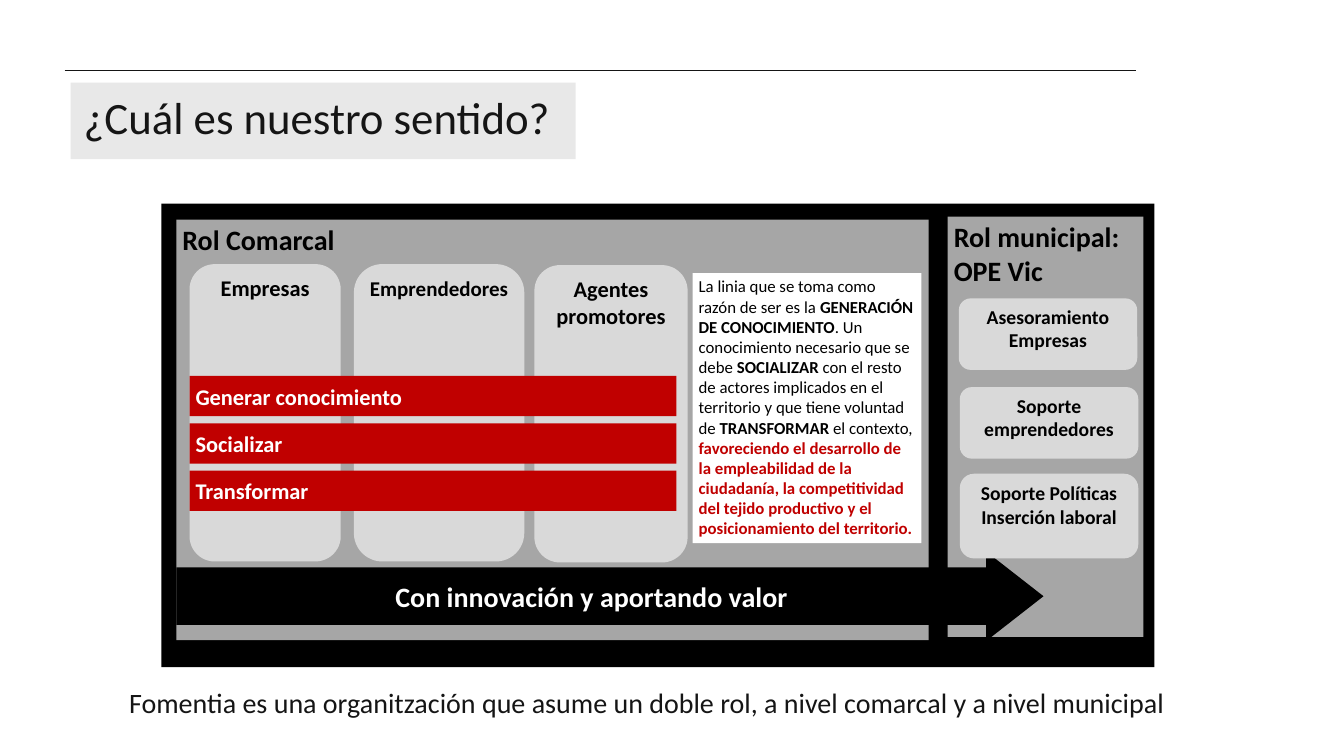
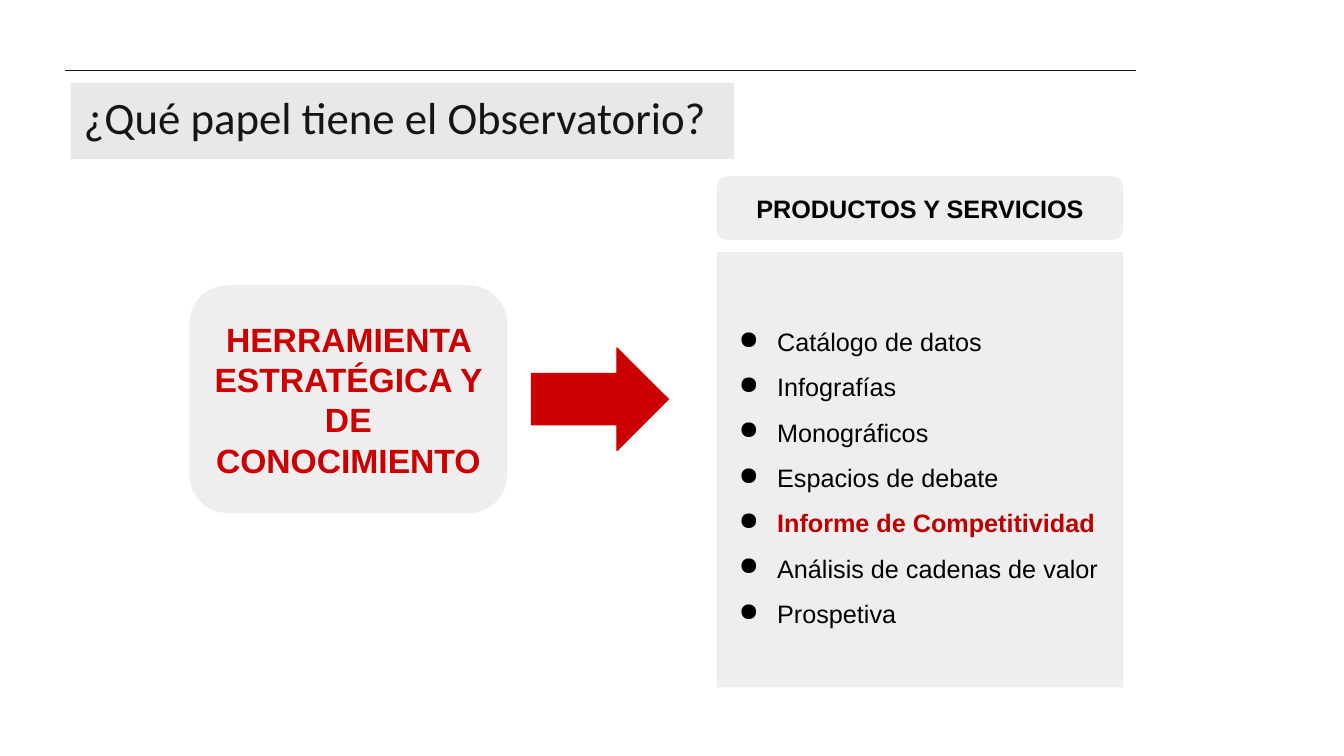
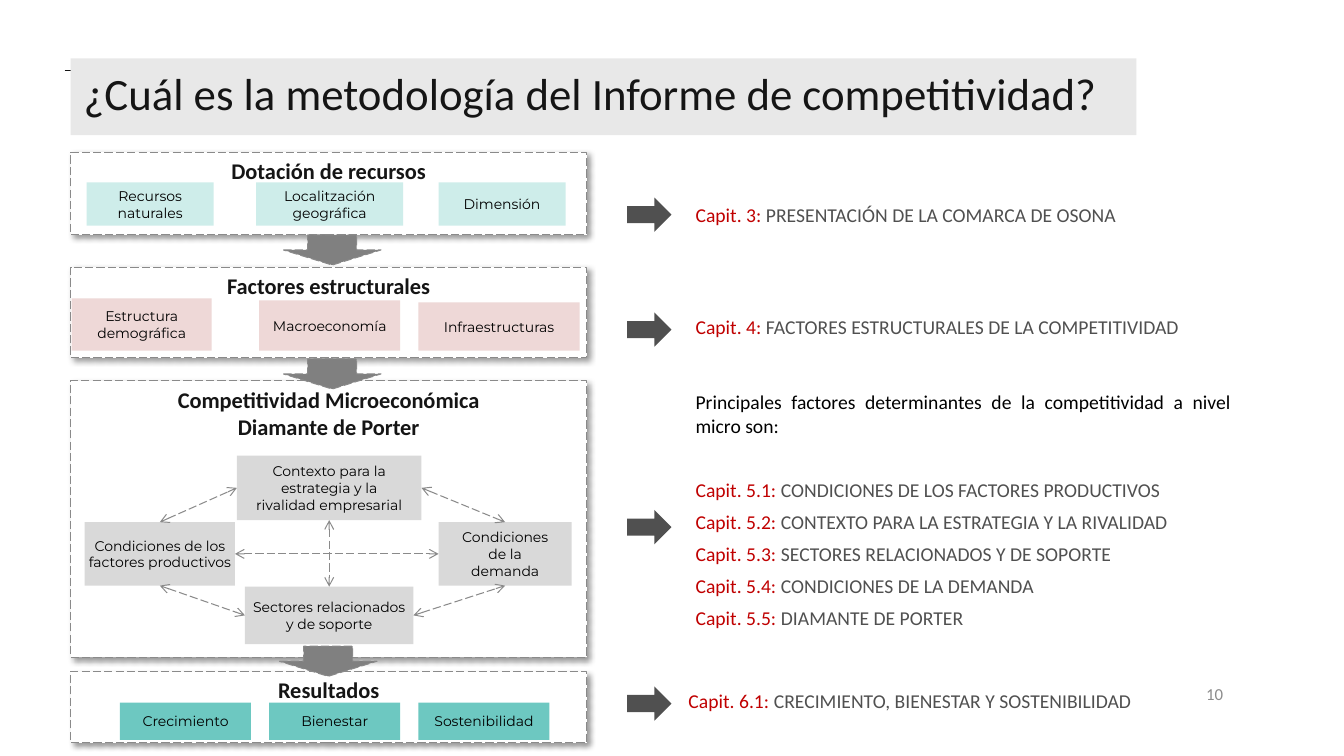
import pptx
import pptx.dml.color
import pptx.enum.dml
import pptx.enum.shapes
import pptx.enum.text
import pptx.oxml.ns
import pptx.util
from lxml import etree

PX = 9144  # EMU per px, 100 px to the inch
COLORS = {
    "white": "FFFFFF", "black": "000000", "ink": "151515", "band": "E8E8E8",
    "panel": "A6A6A6", "card": "D9D9D9", "crimson": "C00000", "red": "CC0000",
    "pale": "EEEEEE", "outline": "8A8A8A", "arrow": "808080", "slate": "505050",
    "number": "8C8C8C", "mint": "CEEDEA", "rose": "EED8D7", "teal": "6DC8C1",
}
SHAPE = pptx.enum.shapes.MSO_SHAPE
ALIGN = pptx.enum.text.PP_ALIGN
ANCHOR = pptx.enum.text.MSO_ANCHOR
TIGHT = (6, 3, 6, 3)
WIDE = (13, 13, 13, 13)
TEN = (10, 10, 10, 10)
PLAIN = (10, 5, 10, 5)
TOP, LEFT, BOTTOM, RIGHT = range(4)  # connection sites of a rectangle


def px(length):
    return pptx.util.Emu(round(length * PX))


def rgb(name):
    return pptx.dml.color.RGBColor.from_string(COLORS[name])


def add_xml(parent, tag, **attributes):
    child = etree.SubElement(parent, pptx.oxml.ns.qn(tag))
    for name, value in attributes.items():
        child.set(name, str(value))
    return child


def chapter(number, heading):
    return [(f"Capit. {number}: ", "crimson", False), (heading, "slate", False)]


class Deck:
    """Holds the presentation, its shared style and the current slide."""

    def __init__(self):
        self.presentation = pptx.Presentation()
        self.presentation.slide_width = px(1333)
        self.presentation.slide_height = px(750)
        self.layout = self.presentation.slide_layouts[5]
        self.slide = None

    def new_slide(self, heading, width, top=82):
        first = self.slide is None
        self.slide = self.presentation.slides.add_slide(self.layout)
        if first:
            self.add_rule_to_layout()
        title = self.slide.shapes.title
        title.left, title.top, title.width, title.height = map(px, (70, top, width, 76))
        title.fill.solid()
        title.fill.fore_color.rgb = rgb("band")
        self.set_text(title, [heading], 32, "ink", inset=WIDE, spacing=0.9)

    def add_rule_to_layout(self):
        """Draw the thin rule once and hand it to the layout, behind every title."""
        rule = self.line((64, 70), (1127, 70), "ink", 0.5)
        self.layout.shapes.element.append(rule.element)

    def line(self, start, end, color, weight):
        connector = self.slide.shapes.add_connector(
            pptx.enum.shapes.MSO_CONNECTOR.STRAIGHT, *map(px, start + end))
        connector.line.color.rgb = rgb(color)
        connector.line.width = pptx.util.Pt(weight)
        add_xml(connector.element.spPr, "a:effectLst")
        return connector

    def link(self, start, start_site, end, end_site):
        """Join two shapes with a dashed double arrow."""
        connector = self.line((0, 0), (0, 0), "outline", 0.75)
        connector.begin_connect(start, start_site)
        connector.end_connect(end, end_site)
        connector.line.dash_style = pptx.enum.dml.MSO_LINE.LONG_DASH
        outline = connector.element.spPr.find(pptx.oxml.ns.qn("a:ln"))
        for tag in ("a:headEnd", "a:tailEnd"):
            add_xml(outline, tag, type="arrow")

    def shape(self, box, fill, kind=SHAPE.RECTANGLE, adjust=(), outline=None, dashed=False):
        shape = self.slide.shapes.add_shape(kind, *map(px, box))
        shape.shadow.inherit = False
        for index, value in enumerate(adjust):
            shape.adjustments[index] = value
        shape.fill.solid()
        shape.fill.fore_color.rgb = rgb(fill)
        if outline:
            shape.line.color.rgb = rgb(outline)
            shape.line.width = pptx.util.Pt(0.75)
            if dashed:
                shape.line.dash_style = pptx.enum.dml.MSO_LINE.LONG_DASH
        else:
            shape.line.fill.background()
        return shape

    def panel(self, box, fill, paragraphs, size, color="black", kind=SHAPE.RECTANGLE,
              adjust=(), **text_style):
        panel = self.shape(box, fill, kind, adjust)
        self.set_text(panel, paragraphs, size, color, **text_style)
        return panel

    def rounded(self, box, fill, paragraphs, size, color="black", **text_style):
        self.panel(box, fill, paragraphs, size, color, SHAPE.ROUNDED_RECTANGLE, (0.167,),
                   bold=True, align=ALIGN.CENTER, **text_style)

    def chip(self, box, fill, paragraphs, inset=PLAIN):
        return self.panel(box, fill, paragraphs, 10, font="Montserrat", align=ALIGN.CENTER,
                          anchor=ANCHOR.MIDDLE, inset=inset)

    def frame(self, box, paragraphs):
        """Dashed white box with a soft shadow and a bold heading."""
        frame = self.shape(box, "white", outline="outline", dashed=True)
        effects = frame.element.spPr.find(pptx.oxml.ns.qn("a:effectLst"))
        shadow = add_xml(effects, "a:outerShdw", blurRad=50800, dist=38100, dir=2700000,
                         algn="tl", rotWithShape=0)
        tint = add_xml(shadow, "a:srgbClr", val=COLORS["black"])
        add_xml(tint, "a:alpha", val=40000)
        self.set_text(frame, paragraphs, 16, "ink", bold=True, align=ALIGN.CENTER)

    def text(self, box, paragraphs, size, color="black", **text_style):
        text_box = self.slide.shapes.add_textbox(*map(px, box))
        self.set_text(text_box, paragraphs, size, color, **text_style)
        return text_box

    def set_text(self, shape, paragraphs, size, color, font="Calibri", bold=False,
                 align=ALIGN.LEFT, anchor=ANCHOR.TOP, inset=PLAIN, spacing=None, after=0,
                 bullet=None):
        """Fill a shape; a paragraph is a string or a list of (text, color, bold) runs."""
        frame = shape.text_frame
        frame.word_wrap = True
        frame.auto_size = pptx.enum.text.MSO_AUTO_SIZE.NONE
        frame.vertical_anchor = anchor
        (frame.margin_left, frame.margin_top,
         frame.margin_right, frame.margin_bottom) = map(px, inset)
        for index, content in enumerate(paragraphs):
            paragraph = frame.add_paragraph() if index else frame.paragraphs[0]
            paragraph.alignment = align
            paragraph.space_before = pptx.util.Pt(0)
            paragraph.space_after = pptx.util.Pt(after)
            if spacing:
                paragraph.line_spacing = spacing
            if bullet:
                self.add_bullet(paragraph, bullet)
            paragraph.font.size = pptx.util.Pt(size)
            paragraph.font.name = font
            paragraph.font.bold = bold
            paragraph.font.color.rgb = rgb(color)
            if isinstance(content, str):
                paragraph.add_run().text = content
                continue
            for words, run_color, run_bold in content:
                run = paragraph.add_run()
                run.text = words
                run.font.bold = run_bold
                run.font.color.rgb = rgb(run_color)

    def add_bullet(self, paragraph, symbol):
        properties = paragraph._p.get_or_add_pPr()
        properties.set("marL", str(px(50)))
        properties.set("indent", str(px(-38)))
        add_xml(add_xml(properties, "a:buClr"), "a:srgbClr", val=COLORS["black"])
        add_xml(properties, "a:buChar", char=symbol)


def build_purpose(deck):
    deck.new_slide("¿Cuál es nuestro sentido?", 501)
    deck.text((115, 662, 1140, 73),
              ["Fomentia es una organitzación que asume un doble rol, "
               "a nivel comarcal y a nivel municipal"],
              20, "ink", align=ALIGN.JUSTIFY, inset=WIDE, spacing=1.15)
    deck.shape((160, 202, 985, 460), "black")
    for box, role in (((940, 215, 194, 417), ["Rol municipal:", "OPE Vic"]),
                      ((175, 218, 746, 417), ["Rol Comarcal"])):
        deck.panel(box, "panel", role, 20, bold=True, inset=TIGHT)

    for left, top, width, size, audience in (
            (188, 262, 150, 16, "Empresas"),
            (351, 262, 169, 15, "Emprendedores"),
            (530, 263, 152, 16, "Agentes promotores")):
        deck.rounded((left, top, width, 295), "card", [audience], size, inset=TIGHT)

    for row, action in enumerate(("Generar conocimiento", "Socializar", "Transformar")):
        deck.panel((188, 373 + 47 * row, 483, 40), "crimson", [action], 16, "white",
                   bold=True, anchor=ANCHOR.MIDDLE, inset=TIGHT)

    deck.panel((175, 547, 860, 89), "black", ["Con innovación y aportando valor"], 20, "white",
               SHAPE.RIGHT_ARROW, (0.64, 0.64), bold=True, align=ALIGN.CENTER,
               anchor=ANCHOR.MIDDLE, inset=TIGHT)

    deck.panel((687, 271, 227, 268), "white", [[
        ("La linia que se toma como razón de ser es la ", "black", False),
        ("GENERACIÓN DE CONOCIMIENTO", "black", True),
        (". Un conocimiento necesario que se debe ", "black", False),
        ("SOCIALIZAR", "black", True),
        (" con el resto de actores implicados en el territorio y que tiene voluntad de ",
         "black", False),
        ("TRANSFORMAR", "black", True),
        (" el contexto, ", "black", False),
        ("favoreciendo el desarrollo de la empleabilidad de la ciudadanía, la competitividad "
         "del tejido productivo y el posicionamiento del territorio.", "crimson", True),
    ]], 12, inset=TIGHT)

    for left, top, height, service in (
            (951, 296, 71, ["Asesoramiento", "Empresas"]),
            (952, 384, 71, ["Soporte emprendedores"]),
            (952, 470, 84, ["Soporte Políticas Inserción laboral"])):
        deck.rounded((left, top, 177, height), "card", service, 14, inset=TIGHT)


def build_observatory(deck):
    deck.new_slide("¿Qué papel tiene el Observatorio?", 658)
    deck.rounded((188, 283, 315, 226), "pale", ["HERRAMIENTA ESTRATÉGICA Y DE CONOCIMIENTO"],
                 24, "red", font="Arial", anchor=ANCHOR.MIDDLE, inset=TEN)
    deck.shape((527, 345, 136, 102), "red", SHAPE.RIGHT_ARROW, outline="red")
    deck.rounded((711, 175, 403, 63), "pale", ["PRODUCTOS Y SERVICIOS"], 18,
                 font="Arial", anchor=ANCHOR.MIDDLE, inset=TEN)
    products = ["Catálogo de datos", "Infografías", "Monográficos", "Espacios de debate",
                [("Informe de Competitividad", "crimson", True)],
                "Análisis de cadenas de valor", "Prospetiva"]
    deck.panel((711, 250, 403, 432), "pale", products, 18, font="Arial",
               anchor=ANCHOR.MIDDLE, inset=TEN, spacing=1.5, bullet="●")


def build_methodology(deck):
    deck.new_slide("¿Cuál es la metodología del Informe de competitividad?", 1057, top=58)
    deck.text((923, 668, 300, 40), ["10"], 12, "number", align=ALIGN.RIGHT,
              anchor=ANCHOR.MIDDLE)

    for top, height, stage in (
            (151, 82, ["Dotación de recursos"]),
            (265, 90, ["Factores estructurales"]),
            (378, 274, ["Competitividad Microeconómica", "Diamante de Porter"]),
            (666, 71, ["Resultados"])):
        deck.frame((70, top, 512, height), stage)
    for left, top in ((281, 233), (281, 356), (277, 641)):
        deck.shape((left, top, 97, 30), "arrow", SHAPE.DOWN_ARROW, outline="outline",
                   dashed=True)

    for left, width, resource in ((86, 126, "Recursos naturales"),
                                  (254, 146, "Localitzación geográfica"),
                                  (435, 126, "Dimensión")):
        deck.chip((left, 181, width, 43), "mint", [resource])
    for left, top, width, factor in ((71, 296, 139, "Estructura demográfica"),
                                     (257, 298, 140, "Macroeconomía"),
                                     (415, 300, 160, "Infraestructuras")):
        deck.chip((left, top, width, 348 - top), "rose", [factor], (4, 5, 4, 5))
    for column, result in enumerate(("Crecimiento", "Bienestar", "Sostenibilidad")):
        deck.chip((119 + 148 * column, 697, 130, 37), "teal", [result])

    inputs, rivalry, sectors, demand = (
        deck.chip(box, "card", label, (0, 0, 0, 0)) for box, label in (
            ((84, 518, 149, 63), ["Condiciones de los factores productivos"]),
            ((235, 452, 183, 64), ["Contexto para la estrategia y la",
                                   "rivalidad empresarial"]),
            ((243, 582, 167, 57), ["Sectores relacionados", "y de soporte"]),
            ((435, 518, 132, 63), ["Condiciones", "de la", "demanda"])))
    for ends in ((rivalry, RIGHT, demand, TOP), (sectors, RIGHT, demand, BOTTOM),
                 (inputs, TOP, rivalry, LEFT), (inputs, BOTTOM, sectors, LEFT),
                 (rivalry, BOTTOM, sectors, TOP), (inputs, RIGHT, demand, LEFT)):
        deck.link(*ends)

    for left, top, number, heading in (
            (680, 196, "3", "PRESENTACIÓN DE LA COMARCA DE OSONA"),
            (680, 308, "4", "FACTORES ESTRUCTURALES DE LA COMPETITIVIDAD"),
            (673, 679, "6.1", "CRECIMIENTO, BIENESTAR Y SOSTENIBILIDAD")):
        deck.text((left, top, 591, 34), [chapter(number, heading)], 14)
    factors = ("CONDICIONES DE LOS FACTORES PRODUCTIVOS",
               "CONTEXTO PARA LA ESTRATEGIA Y LA RIVALIDAD",
               "SECTORES RELACIONADOS Y DE SOPORTE",
               "CONDICIONES DE LA DEMANDA",
               "DIAMANTE DE PORTER")
    introduction = "Principales factores determinantes de la competitividad a nivel micro son:"
    micro = deck.text(
        (680, 382, 551, 281),
        [introduction] + [chapter(f"5.{n}", name) for n, name in enumerate(factors, 1)],
        14, after=6)
    opening = micro.text_frame.paragraphs[0]
    opening.alignment = ALIGN.JUSTIFY
    opening.space_after = pptx.util.Pt(29)

    for top in (196, 310, 506, 681):
        deck.shape((622, top, 44, 34), "slate", SHAPE.RIGHT_ARROW)


def main():
    deck = Deck()
    build_purpose(deck)
    build_observatory(deck)
    build_methodology(deck)
    deck.presentation.save("out.pptx")


if __name__ == "__main__":
    main()
